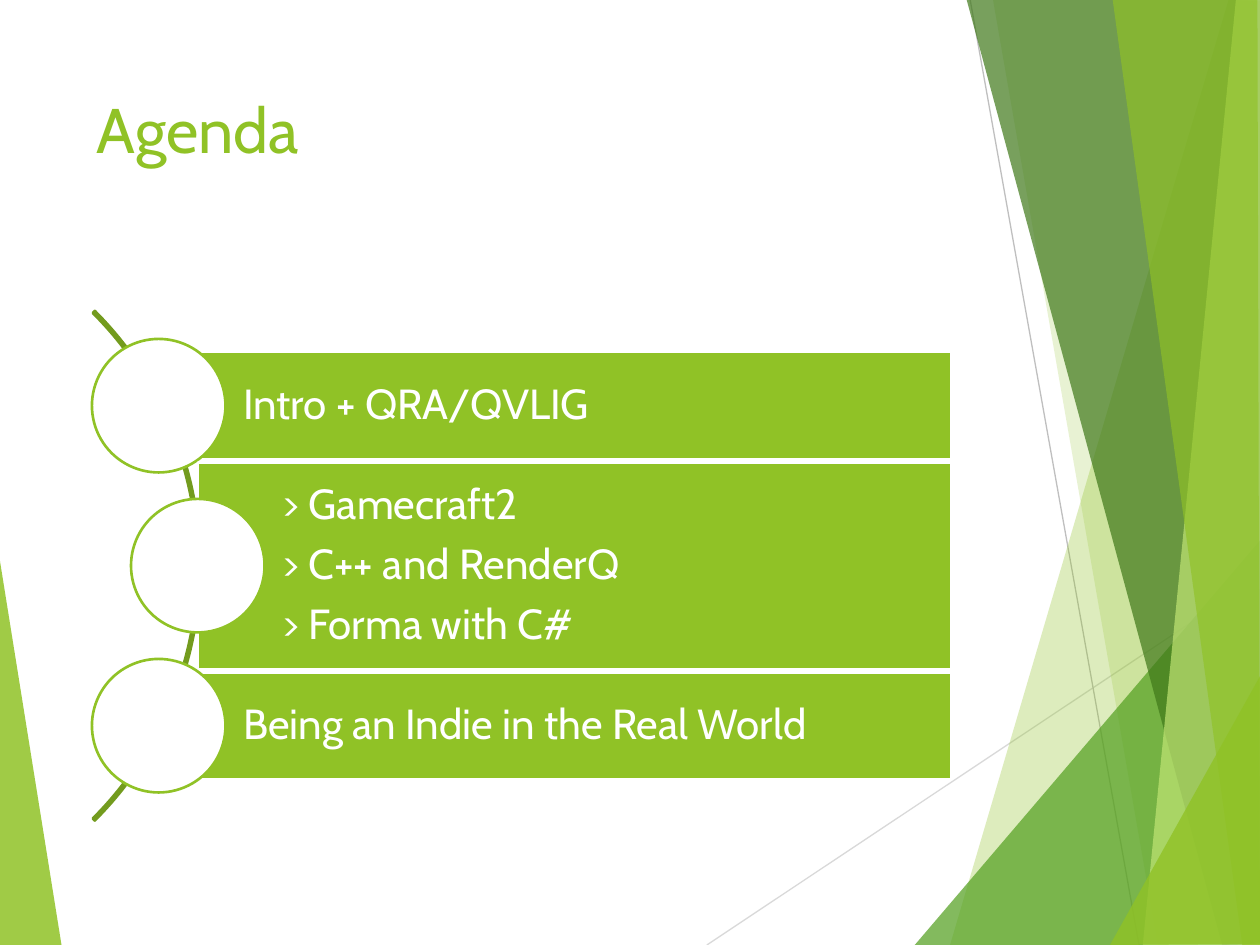
from dataclasses import dataclass
from typing import Optional

from lxml.etree import SubElement
from pptx import Presentation
from pptx.dml.color import RGBColor
from pptx.enum.shapes import MSO_CONNECTOR as Connector, MSO_SHAPE as Shape
from pptx.enum.text import MSO_ANCHOR as Anchor, PP_ALIGN as Align
from pptx.oxml.ns import qn
from pptx.util import Inches, Pt


@dataclass(frozen=True)
class Theme:
    font: str = "Cabin"
    title_size: int = 36
    body_size: int = 24
    outline: float = 1.5
    hairline: float = 0.75
    green: str = "90C226"
    leaf: str = "54A021"
    forest: str = "3F7819"
    lime: str = "C0E474"
    olive: str = "739B1E"
    white: str = "FFFFFF"
    light_gray: str = "D9D9D9"
    gray: str = "BFBFBF"


@dataclass(frozen=True)
class Facet:
    points: tuple
    color: str
    opacity: int


@dataclass(frozen=True)
class Ray:
    start: tuple
    end: tuple
    color: str


@dataclass(frozen=True)
class AgendaItem:
    left: float
    height: float
    lines: tuple


THEME = Theme()
BAR_RIGHT = 7.55
CENTER_Y = 4.49
ITEM_PITCH = 1.27
CIRCLE_SIZE = 1.06

LEFT_FACET = Facet(((-0.01, 4.39), (0.49, 7.51), (-0.01, 7.5)), THEME.green, 85)
RAYS = (
    Ray((5.61, 7.5), (10.01, 4.57), THEME.light_gray),
    Ray((7.7, 0), (9.04, 7.5), THEME.gray),
)
RIGHT_FACETS = (
    Facet(((9.75, 0), (7.54, 7.5), (10.02, 7.51), (10.01, 0.01)), THEME.green, 30),
    Facet(((7.88, -0.01), (9.19, 7.5), (10.01, 7.5), (10.01, -0.01)), THEME.green, 20),
    Facet(((7.26, 7.5), (10, 4.29), (10.01, 7.5)), THEME.leaf, 72),
    Facet(((7.67, -0.01), (9.7, 7.5), (10.01, 7.49), (10.01, -0.01)), THEME.forest, 70),
    Facet(((9.81, -0.01), (9.07, 7.5), (10.01, 7.5), (10, -0.01)), THEME.lime, 70),
    Facet(((8.83, -0.01), (9.86, 7.5), (10, 7.5), (9.98, -0.01)), THEME.green, 65),
    Facet(((8.81, 7.5), (10.01, 5.35), (10.01, 7.49)), THEME.green, 80),
)
ITEMS = (
    AgendaItem(1.26, 0.85, ("Intro + QRA/QVLIG",)),
    AgendaItem(1.57, 1.64, ("> Gamecraft2", "> C++ and RenderQ", "> Forma with C#")),
    AgendaItem(1.26, 0.85, ("Being an Indie in the Real World",)),
)


def rgb(color: str) -> RGBColor:
    return RGBColor.from_string(color)


def set_values(target, values: dict) -> None:
    for name, value in values.items():
        setattr(target, name, value)


def add_facet(slide, facet: Facet) -> None:
    points = [(Inches(x), Inches(y)) for x, y in facet.points]
    builder = slide.shapes.build_freeform(*points[0])
    builder.add_line_segments(points[1:], close=True)
    shape = builder.convert_to_shape()
    shape.shadow.inherit = False
    shape.line.fill.background()
    shape.fill.solid()
    shape.fill.fore_color.rgb = rgb(facet.color)
    color = shape.fill._xPr.find(qn("a:solidFill"))[0]
    SubElement(color, qn("a:alpha"), val=str(facet.opacity * 1000))


def add_ray(slide, ray: Ray) -> None:
    connector = slide.shapes.add_connector(
        Connector.STRAIGHT, *(Inches(value) for value in ray.start + ray.end)
    )
    connector.line.color.rgb = rgb(ray.color)
    connector.line.width = Pt(THEME.hairline)
    SubElement(connector._element.spPr, qn("a:effectLst"))


def add_outlined(slide, kind: Shape, box: tuple, line: str, fill: Optional[str] = None):
    shape = slide.shapes.add_shape(kind, *(Inches(value) for value in box))
    shape.shadow.inherit = False
    if fill:
        shape.fill.solid()
        shape.fill.fore_color.rgb = rgb(fill)
    else:
        shape.fill.background()
    shape.line.color.rgb = rgb(line)
    shape.line.width = Pt(THEME.outline)
    return shape


def write_lines(shape, lines: tuple, size: int, color: str, frame_format: dict,
                paragraph_format: dict) -> None:
    frame = shape.text_frame
    set_values(frame, {"word_wrap": True, **frame_format})
    for index, line in enumerate(lines):
        paragraph = frame.add_paragraph() if index else frame.paragraphs[0]
        set_values(paragraph, {"alignment": Align.LEFT, **paragraph_format})
        run = paragraph.add_run()
        run.text = line
        set_values(run.font, {"name": THEME.font, "size": Pt(size)})
        run.font.color.rgb = rgb(color)


def add_item(slide, item: AgendaItem, center_y: float) -> None:
    bar = add_outlined(
        slide, Shape.RECTANGLE,
        (item.left, center_y - item.height / 2, BAR_RIGHT - item.left, item.height),
        THEME.white, THEME.green,
    )
    inset = Inches(0.07)
    write_lines(
        bar, item.lines, THEME.body_size, THEME.white,
        {"vertical_anchor": Anchor.MIDDLE, "margin_left": Inches(0.67),
         "margin_top": inset, "margin_right": inset, "margin_bottom": inset},
        {"line_spacing": 0.9, "space_after": Pt(8.4)},
    )
    radius = CIRCLE_SIZE / 2
    add_outlined(
        slide, Shape.OVAL,
        (item.left - radius, center_y - radius, CIRCLE_SIZE, CIRCLE_SIZE),
        THEME.green, THEME.white,
    )


def main() -> None:
    presentation = Presentation()
    presentation.slide_width = Inches(10)
    presentation.slide_height = Inches(7.5)
    slide = presentation.slides.add_slide(presentation.slide_layouts[6])

    add_facet(slide, LEFT_FACET)
    for ray in RAYS:
        add_ray(slide, ray)
    for facet in RIGHT_FACETS:
        add_facet(slide, facet)

    title = slide.shapes.add_textbox(Inches(0.67), Inches(0.67), Inches(6.94), Inches(1.44))
    write_lines(title, ("Agenda",), THEME.title_size, THEME.green,
                {"vertical_anchor": Anchor.TOP}, {})

    arc = add_outlined(slide, Shape.BLOCK_ARC, (-4.13, 1.63, 5.72, 5.72), THEME.olive)
    for index, value in enumerate((189, 27, 0.004)):
        arc.adjustments[index] = value
    for index, item in enumerate(ITEMS):
        add_item(slide, item, CENTER_Y + (index - 1) * ITEM_PITCH)

    presentation.save("out.pptx")


if __name__ == "__main__":
    main()
